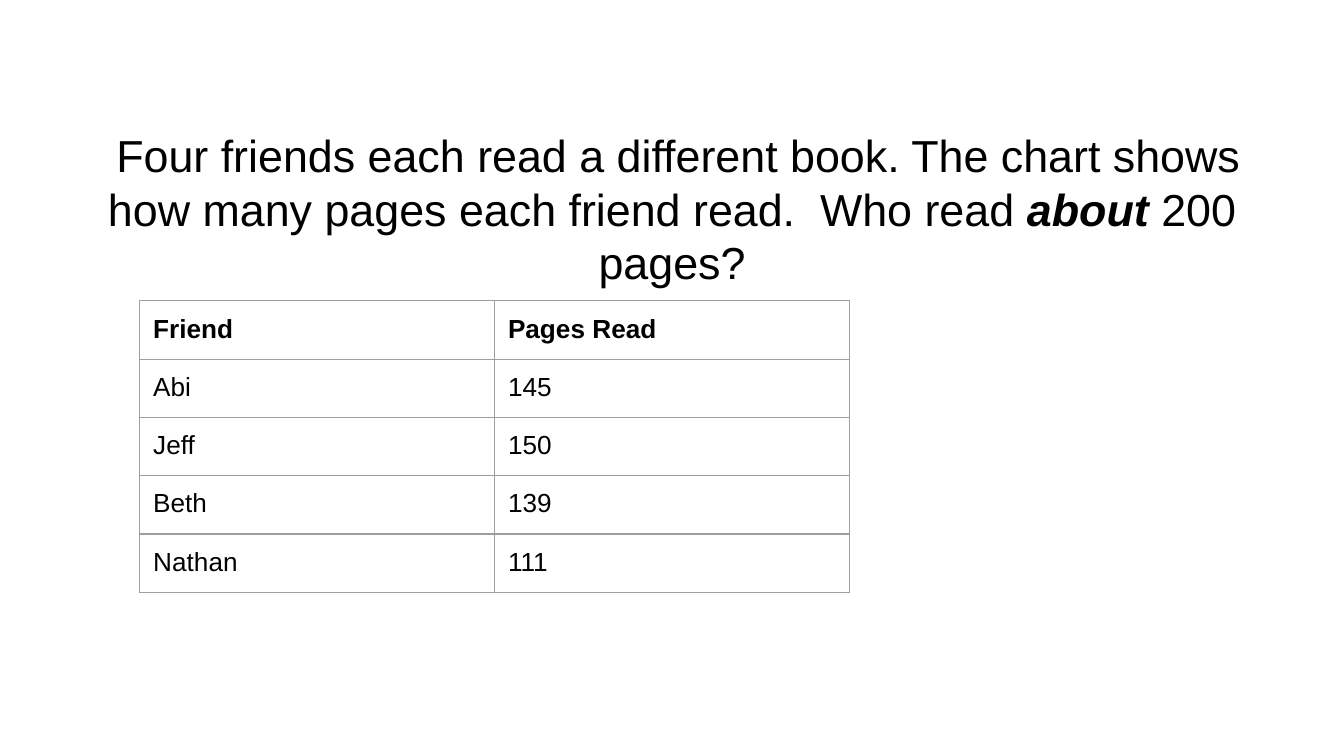
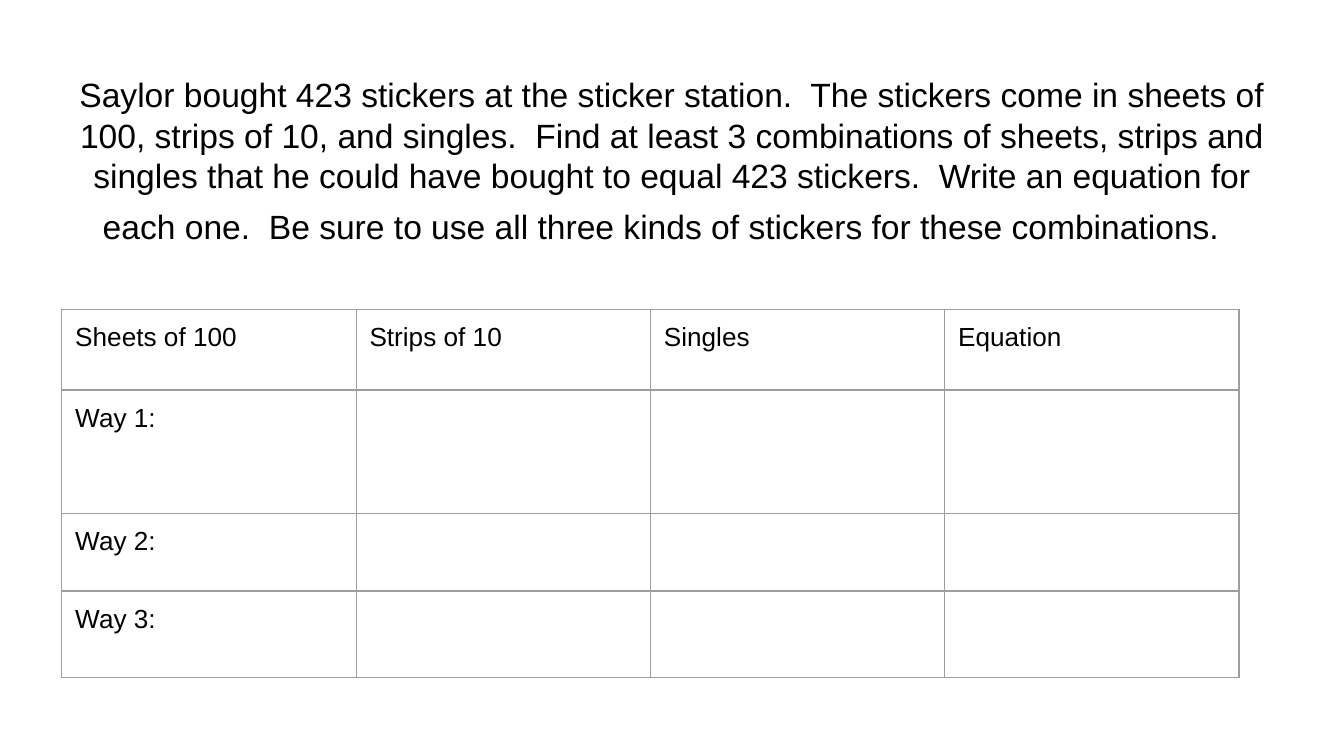
from dataclasses import dataclass

import pptx
import pptx.dml.color
import pptx.enum.text
import pptx.oxml.ns
import pptx.util
from lxml import etree


@dataclass(frozen=True)
class Theme:
    width: float = 10
    height: float = 5.625
    font: str = "Arial"
    text: str = "000000"
    paper: str = "FFFFFF"
    border: str = "9E9E9E"
    border_pt: float = 0.75
    large: int = 24
    medium: int = 18
    small: int = 14
    inset: float = 0.1
    title_left: float = 3.4
    title_width: float = 93.2


THEME = Theme()


def across(percent):
    return pptx.util.Inches(THEME.width * percent / 100)


def down(percent):
    return pptx.util.Inches(THEME.height * percent / 100)


def rgb(value):
    return pptx.dml.color.RGBColor.from_string(value)


def add_slide(prs):
    s = prs.slides.add_slide(prs.slide_layouts[6])
    s.background.fill.solid()
    s.background.fill.fore_color.rgb = rgb(THEME.paper)
    return s


def add_run(p, text, size, bold=False, italic=False):
    r = p.add_run()
    r.text = text
    r.font.name = THEME.font
    r.font.size = pptx.util.Pt(size)
    r.font.bold = bold
    r.font.italic = italic
    r.font.color.rgb = rgb(THEME.text)


def set_insets(target):
    inset = pptx.util.Inches(THEME.inset)
    target.margin_left = target.margin_right = inset
    target.margin_top = target.margin_bottom = inset


def add_question(s, top, height, runs, space_below=0):
    sp = s.shapes.add_textbox(across(THEME.title_left), down(top),
                              across(THEME.title_width), down(height))
    tf = sp.text_frame
    tf.word_wrap = True
    tf.vertical_anchor = pptx.enum.text.MSO_ANCHOR.BOTTOM
    set_insets(tf)
    tf.margin_bottom += down(space_below)
    p = tf.paragraphs[0]
    p.alignment = pptx.enum.text.PP_ALIGN.CENTER
    for run in runs:
        add_run(p, *run)


def add_borders(cell):
    qn = pptx.oxml.ns.qn
    tc_pr = cell._tc.get_or_add_tcPr()
    for side in ("lnL", "lnR", "lnT", "lnB"):
        ln = etree.SubElement(tc_pr, qn(f"a:{side}"),
                              w=str(pptx.util.Pt(THEME.border_pt)))
        fill = etree.SubElement(ln, qn("a:solidFill"))
        etree.SubElement(fill, qn("a:srgbClr"), val=THEME.border)


def add_grid(s, left, top, col_width, row_heights, rows, bold_header=False):
    n_cols = len(rows[0])
    frame = s.shapes.add_table(len(rows), n_cols, across(left), down(top),
                               across(col_width * n_cols), down(sum(row_heights)))
    table = frame.table
    table.first_row = table.horz_banding = False
    for col in table.columns:
        col.width = across(col_width)
    for i, (height, texts) in enumerate(zip(row_heights, rows)):
        table.rows[i].height = down(height)
        for j, text in enumerate(texts):
            cell = table.cell(i, j)
            set_insets(cell)
            add_borders(cell)
            cell.fill.background()
            if text:
                add_run(cell.text_frame.paragraphs[0], text, THEME.small,
                        bold_header and i == 0)


def build_pages_read(prs):
    s = add_slide(prs)
    add_question(s, 14.4, 39.8, [
        (" Four friends each read a different book. The chart shows how many "
         "pages each friend read.  Who read ", THEME.large),
        ("about ", THEME.large, True, True),
        ("200 pages?", THEME.large),
    ], space_below=14.2)
    rows = [("Friend", "Pages Read"), ("Abi", "145"), ("Jeff", "150"),
            ("Beth", "139"), ("Nathan", "111")]
    add_grid(s, 10.4, 39.8, 26.4, [7.45] * len(rows), rows, bold_header=True)


def build_stickers(prs):
    s = add_slide(prs)
    add_question(s, 5.5, 29.2, [
        ("Saylor bought 423 stickers at the sticker station.  The stickers come "
         "in sheets of 100, strips of 10, and singles.  Find at least 3 "
         "combinations of sheets, strips and singles that he could have bought "
         "to equal 423 stickers.  Write an equation for each one.  Be sure to "
         "use all three kinds of stickers for these combinations. ", THEME.medium),
        (" ", THEME.large),
    ])
    rows = [("Sheets of 100", "Strips of 10", "Singles", "Equation")]
    rows += [(f"Way {n}:", "", "", "") for n in range(1, 4)]
    add_grid(s, 4.6, 40.9, 21.9, [10.7, 16.3, 10.3, 11.4], rows)


def main():
    prs = pptx.Presentation()
    prs.slide_width = across(100)
    prs.slide_height = down(100)
    build_pages_read(prs)
    build_stickers(prs)
    prs.save("out.pptx")


if __name__ == "__main__":
    main()
